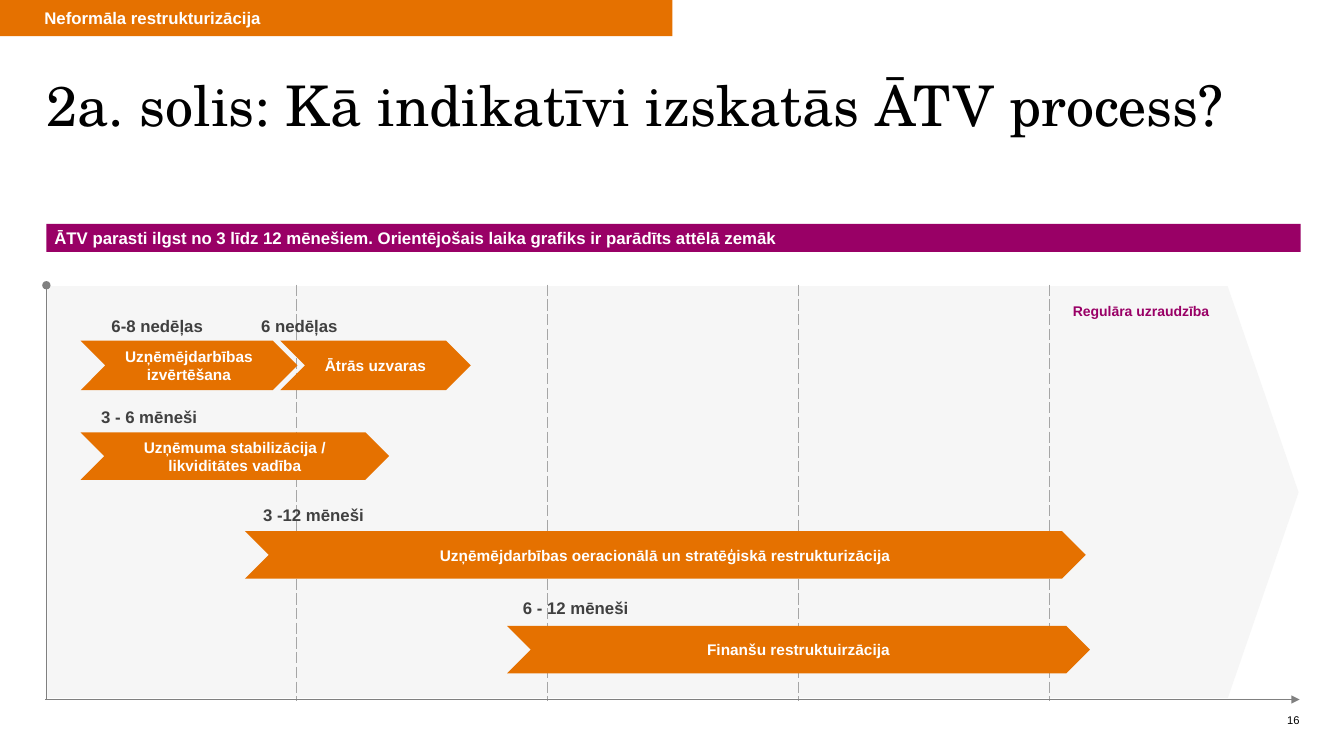
from lxml import etree
from pptx import Presentation
from pptx.dml.color import RGBColor
from pptx.enum import shapes, text
from pptx.oxml import parse_xml
from pptx.oxml.ns import nsdecls, qn
from pptx.util import Inches, Pt

ORANGE, PURPLE, GREY, WHITE = "E57100", "990066", "808080", "FFFFFF"
MSO = shapes.MSO_SHAPE
LEFT, MID = text.PP_ALIGN.LEFT, text.MSO_ANCHOR.MIDDLE
CENTER, RIGHT = text.PP_ALIGN.CENTER, text.PP_ALIGN.RIGHT
TOP = text.MSO_ANCHOR.TOP


def rgb(color):
    return RGBColor.from_string(color)


def write(sp, words, size, color, align=CENTER, anchor=TOP,
          insets=(0.1, 0.05, 0.1, 0.05), bold=True, font="Arial"):
    tf = sp.text_frame
    tf.word_wrap = True
    tf.vertical_anchor = anchor
    tf.margin_left, tf.margin_top, tf.margin_right, tf.margin_bottom = map(Inches, insets)
    tf.text = words
    p = tf.paragraphs[0]
    p.alignment = align
    f = p.runs[0].font
    f.name, f.size, f.bold = font, Pt(size), bold
    f.color.rgb = rgb(color)


prs = Presentation()
prs.slide_width, prs.slide_height = Inches(13.33), Inches(7.5)
s = prs.slides.add_slide(prs.slide_layouts[5])

# Title
title = s.shapes.title
title.left, title.top, title.width, title.height = map(Inches, (0.46, 0.36, 12.43, 1.44))
write(title, "2a. solis: Kā indikatīvi izskatās ĀTV process?", 40, "000000", LEFT, MID,
      (0, 0, 0, 0), False, "TeX Gyre Schola")
title.text_frame.paragraphs[0].line_spacing = 0.9

# Pale arrow behind the timeline
plate = s.shapes.add_shape(MSO.PENTAGON, *map(Inches, (0.47, 2.83, 12.41, 4.11)))
plate.adjustments[0] = 0.172
plate.shadow.inherit = False
plate.line.fill.background()
plate.fill.solid()
plate.fill.fore_color.rgb = rgb("D9D9D9")
shade = plate.fill._xPr.find(qn("a:solidFill"))[0]
etree.SubElement(shade, qn("a:alpha")).set("val", "22000")

# Period grid: dashed lines between the columns only
COLS = 5
tbl = s.shapes.add_table(1, COLS, *map(Inches, (0.45, 2.83, 12.45, 4.11))).table
tbl.first_row = tbl.horz_banding = False
for i in range(COLS):
    tbl.columns[i].width = Inches(2.49)
    cell = tbl.cell(0, i)
    tcPr = cell._tc.get_or_add_tcPr()
    inner = ("A6A6A6", 1, "sysDash")
    outer = (WHITE, 1, "solid")
    borders = {"lnL": inner if i else outer,
               "lnR": inner if i < COLS - 1 else outer,
               "lnT": outer,
               "lnB": (WHITE, 3, "solid")}
    for side, (color, width, dash) in borders.items():
        tcPr.append(parse_xml(
            f'<a:{side} {nsdecls("a")} w="{Pt(width)}"><a:solidFill><a:srgbClr val="{color}"/>'
            f'</a:solidFill><a:prstDash val="{dash}"/></a:{side}>'))
    cell.fill.background()

# Axes
for x1, y1, x2, y2, end, kind in [(0.45, 6.94, 12.89, 6.94, "tailEnd", "triangle"),
                                  (0.46, 2.83, 0.46, 6.94, "headEnd", "oval")]:
    axis = s.shapes.add_connector(shapes.MSO_CONNECTOR.STRAIGHT,
                                  *map(Inches, (x1, y1, x2, y2)))
    axis.line.color.rgb = rgb(GREY)
    axis.line.width = Pt(0.5)
    etree.SubElement(axis.line._get_or_add_ln(), qn(f"a:{end}")).set("type", kind)
    etree.SubElement(axis._element.spPr, qn("a:effectLst"))

# Work streams
for x, y, w, h, words in [
    (0.8, 3.38, 2.15, 0.49, "Uzņēmējdarbības izvērtēšana"),
    (2.78, 3.38, 1.89, 0.49, "Ātrās uzvaras"),
    (0.8, 4.29, 3.06, 0.47, "Uzņēmuma stabilizācija / likviditātes vadība"),
    (2.43, 5.27, 8.34, 0.47, "Uzņēmējdarbības oeracionālā un stratēģiskā restrukturizācija"),
    (5.03, 6.21, 5.78, 0.47, "Finanšu restruktuirzācija"),
]:
    sp = s.shapes.add_shape(MSO.CHEVRON, *map(Inches, (x, y, w, h)))
    sp.shadow.inherit = False
    sp.fill.solid()
    sp.fill.fore_color.rgb = rgb(ORANGE)
    sp.line.fill.background()
    write(sp, words, 11, WHITE, anchor=MID)

# Durations
for x, y, words in [(0.88, 3.08, "6-8 nedēļas"), (2.29, 3.08, "6 nedēļas"),
                    (0.8, 3.99, "3 - 6 mēneši"), (2.43, 4.96, "3 -12 mēneši"),
                    (5.03, 5.88, "6 - 12 mēneši")]:
    label = s.shapes.add_textbox(*map(Inches, (x, y, 1.36, 0.3)))
    write(label, words, 12, "404040")

# Monitoring note and slide number
note = s.shapes.add_textbox(*map(Inches, (10.26, 2.95, 2.25, 0.27)))
write(note, "Regulāra uzraudzība ", 10, PURPLE, insets=(0, 0.05, 0.1, 0.05))
number = s.shapes.add_textbox(*map(Inches, (9.89, 7.08, 3, 0.13)))
write(number, "16", 8, "000000", RIGHT, MID, (0, 0, 0, 0), False)

# Section tab and message bar
for box, color, words, anchor, insets in [
    ((0, 0, 6.67, 0.36), ORANGE, "Neformāla restrukturizācija", MID, (0.44, 0.08, 0.1, 0.08)),
    ((0.46, 2.22, 12.44, 0.28), PURPLE,
     "ĀTV parasti ilgst no 3 līdz 12 mēnešiem. Orientējošais laika grafiks ir parādīts attēlā zemāk",
     TOP, (0.08, 0.04, 0.08, 0.04)),
]:
    bar = s.shapes.add_shape(MSO.RECTANGLE, *map(Inches, box))
    bar.shadow.inherit = False
    bar.fill.solid()
    bar.fill.fore_color.rgb = rgb(color)
    bar.line.fill.background()
    write(bar, words, 12, WHITE, LEFT, anchor, insets)

prs.save("out.pptx")
